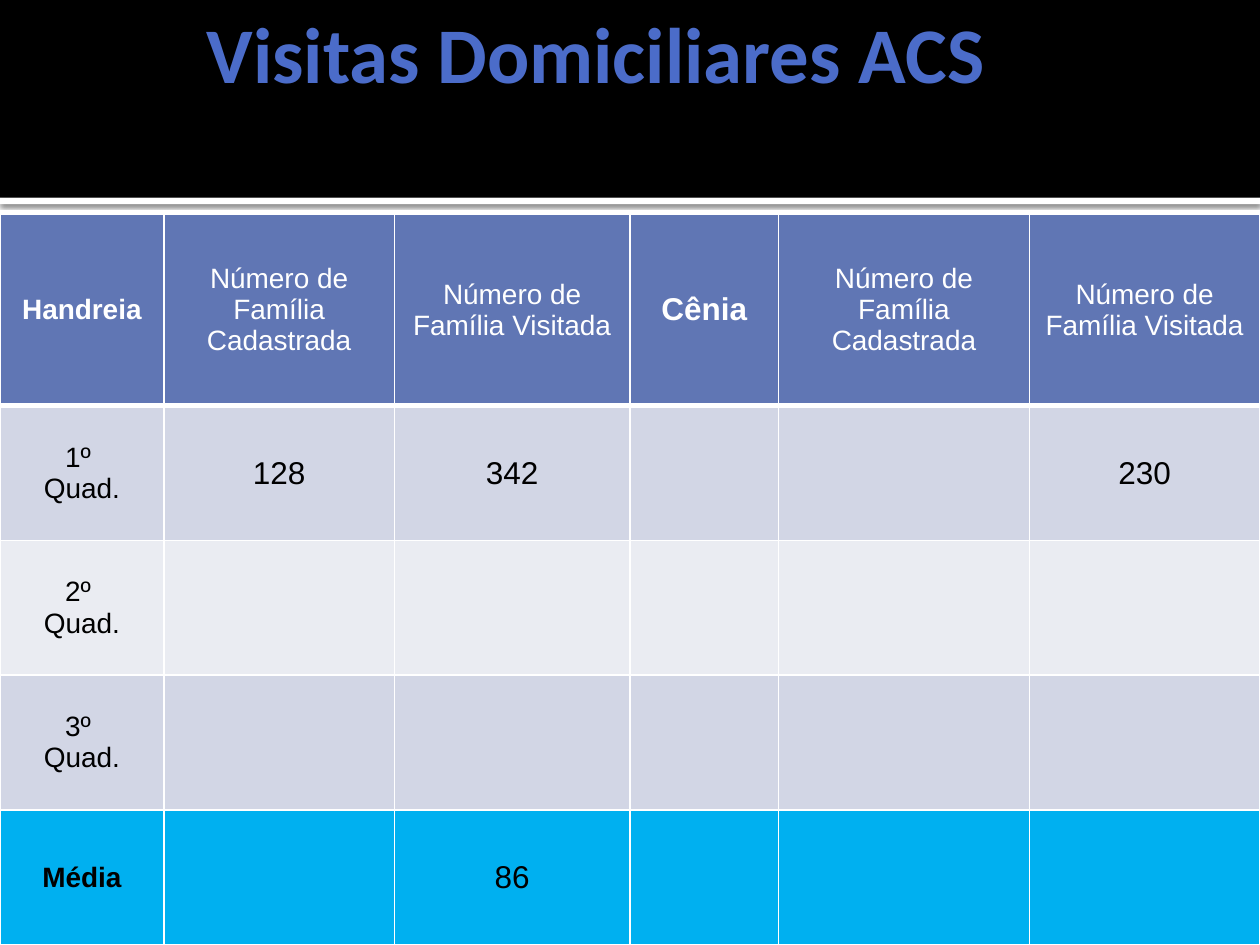
from lxml import etree
from pptx import Presentation
from pptx.dml.color import RGBColor
from pptx.enum.shapes import MSO_SHAPE
from pptx.enum.text import MSO_ANCHOR, PP_ALIGN
from pptx.oxml.ns import qn
from pptx.util import Inches, Pt

RECT = MSO_SHAPE.RECTANGLE
MIDDLE = MSO_ANCHOR.MIDDLE
LEFT, CENTER = PP_ALIGN.LEFT, PP_ALIGN.CENTER

COLORS = {
    "white": "FFFFFF", "black": "000000", "title": "4B6CC9",
    "head": "6076B4", "odd": "D2D6E5", "even": "EAECF2", "mean": "00B0F0",
}
COLS = [1.3, 1.83, 1.87, 1.18, 1.99, 1.83]
ROWS = [1.52] + [1.07] * 4
FILLS = ["head", "odd", "even", "odd", "mean"]
KNOWN, SEEN = "Número de Família Cadastrada", "Número de Família Visitada"
CELLS = [
    ["Handreia", KNOWN, SEEN, "Cênia", KNOWN, SEEN],
    ["1º \nQuad.", "128", "342", "", "", "230"],
    ["2º \nQuad."] + [""] * 5,
    ["3º \nQuad."] + [""] * 5,
    ["Média", "", "86", "", "", ""],
]
BOLD = {"Handreia", "Cênia", "Média"}


def rgb(name):
    return RGBColor.from_string(COLORS[name])


def add_color(parent, name):
    return etree.SubElement(parent, qn("a:srgbClr"), val=COLORS[name])


def add_rect(slide, x, y, w, h, color):
    rect = slide.shapes.add_shape(RECT, Inches(x), Inches(y), Inches(w), Inches(h))
    rect.shadow.inherit = False
    rect.fill.solid()
    rect.fill.fore_color.rgb = rgb(color)
    rect.line.fill.background()
    return rect


def add_shadow(shape):
    effects = shape._element.spPr.find(qn("a:effectLst"))
    shade = etree.SubElement(effects, qn("a:outerShdw"), blurRad=str(Pt(2.5)),
                             dist=str(Pt(0.8)), dir="5400000", rotWithShape="0")
    etree.SubElement(add_color(shade, "black"), qn("a:alpha"), val="60000")


def add_header(slide, x, y, w, h):
    # White rule with a soft shadow below the black band
    add_shadow(add_rect(slide, x, y + h, w, 0.05, "white"))
    add_rect(slide, x, y, w, h, "black")

    # Title, brought in front of the band
    title = slide.shapes.title
    slide.shapes._spTree.append(title._element)
    title.left, title.top = Inches(x + 1.54), Inches(y - 0.27)
    title.width, title.height = Inches(9), Inches(1.37)
    frame = title.text_frame
    frame.text = "Visitas Domiciliares ACS"
    frame.vertical_anchor = MIDDLE
    frame.margin_left = Inches(0.1)
    frame.margin_right = frame.margin_top = frame.margin_bottom = Inches(0.05)
    para = frame.paragraphs[0]
    para.alignment = LEFT
    font = para.font
    font.name, font.size, font.bold = "Calibri", Pt(45), True
    font.color.rgb = rgb("title")


def add_borders(cell, row):
    props = cell._tc.get_or_add_tcPr()
    widths = {"L": 1, "R": 1, "T": 3 if row == 1 else 1, "B": 3 if row == 0 else 1}
    for side, width in widths.items():
        line = etree.SubElement(props, qn("a:ln" + side), w=str(Pt(width)))
        add_color(etree.SubElement(line, qn("a:solidFill")), "white")


def fill_cell(cell, text, row):
    add_borders(cell, row)
    cell.fill.solid()
    cell.fill.fore_color.rgb = rgb(FILLS[row])
    cell.vertical_anchor = MIDDLE
    cell.text = text
    large = text.isdigit() or text == "Cênia"
    for para in cell.text_frame.paragraphs:
        para.alignment = CENTER
        font = para.font
        font.name, font.size = "Arial", Pt(18 if large else 16)
        font.bold = text in BOLD
        font.color.rgb = rgb("black" if row else "white")


def add_visits(slide, x, y, w, h):
    table = slide.shapes.add_table(len(ROWS), len(COLS), Inches(x), Inches(y),
                                   Inches(w), Inches(h)).table
    for col, width in zip(table.columns, COLS):
        col.width = Inches(width)
    for row, height in zip(table.rows, ROWS):
        row.height = Inches(height)
    for r, texts in enumerate(CELLS):
        for c, text in enumerate(texts):
            fill_cell(table.cell(r, c), text, r)


def main():
    prs = Presentation()
    prs.slide_width, prs.slide_height = Inches(10), Inches(7.5)
    slide = prs.slides.add_slide(prs.slide_layouts[5])
    add_header(slide, 0, 0, 10, 1.57)
    add_visits(slide, 0, 1.7, 10, 5.8)
    prs.save("out.pptx")


if __name__ == "__main__":
    main()
